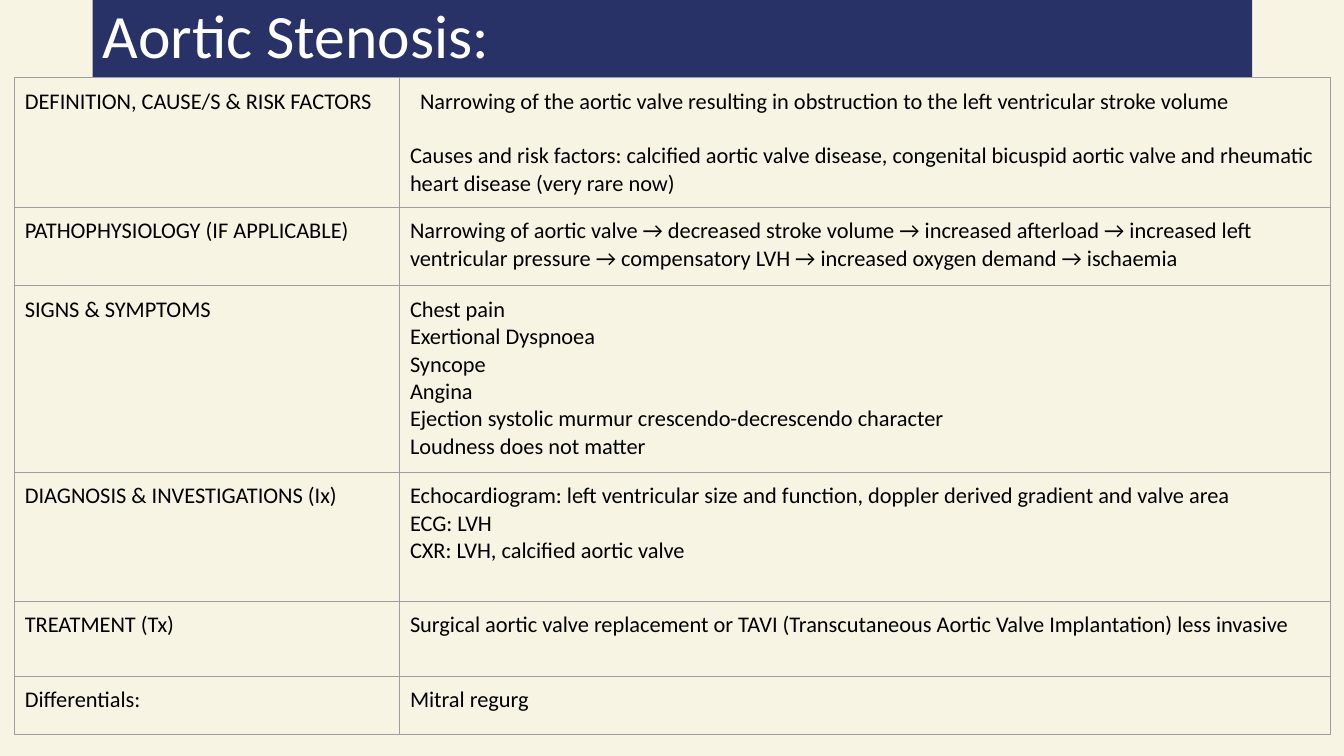
"""Build a study slide that sums up aortic stenosis in a two-column table."""
from lxml import etree
from pptx import Presentation
from pptx import util as u
from pptx.dml.color import RGBColor
from pptx.enum import text
from pptx.oxml import ns

CREAM = RGBColor(0xF8, 0xF4, 0xE4)
NAVY = RGBColor(0x29, 0x32, 0x67)
WHITE = RGBColor(0xFF, 0xFF, 0xFF)
BLACK = RGBColor(0, 0, 0)
GREY = RGBColor(0x9E, 0x9E, 0x9E)

COLS = [28.66, 69.24]
ROWS = [
    (16.4, "DEFINITION, CAUSE/S & RISK FACTORS", [
        "Narrowing of the aortic valve resulting in obstruction to the left ventricular stroke volume",
        "Causes and risk factors: calcified aortic valve disease, congenital bicuspid aortic valve "
        "and rheumatic heart disease (very rare now)"]),
    (10.4, "PATHOPHYSIOLOGY (IF APPLICABLE)", [
        "Narrowing of aortic valve → decreased stroke volume → increased afterload → increased left "
        "ventricular pressure → compensatory LVH → increased oxygen demand → ischaemia"]),
    (24.67, "SIGNS & SYMPTOMS", [
        "Chest pain", "Exertional Dyspnoea", "Syncope", "Angina",
        "Ejection systolic murmur crescendo-decrescendo character",
        "Loudness does not matter"]),
    (17.07, "DIAGNOSIS & INVESTIGATIONS (Ix)", [
        "Echocardiogram: left ventricular size and function, doppler derived gradient and valve area",
        "ECG: LVH", "CXR: LVH, calcified aortic valve"]),
    (9.87, "TREATMENT (Tx)", [
        "Surgical aortic valve replacement or TAVI (Transcutaneous Aortic Valve Implantation) "
        "less invasive"]),
    (7.73, "Differentials:", ["Mitral regurg"]),
]


class Deck:
    """Hold the style and the slide; lengths are percentages of the slide's size."""

    def __init__(self, font):
        self.font = font
        self.prs = Presentation()
        self.prs.slide_width = u.Inches(13.33)
        self.prs.slide_height = u.Inches(7.5)
        self.slide = self.prs.slides.add_slide(self.prs.slide_layouts[5])
        fill = self.slide.background.fill
        fill.solid()
        fill.fore_color.rgb = CREAM

    def wide(self, share):
        """Turn a share of the width into a length."""
        return u.Emu(round(self.prs.slide_width * share / 100))

    def high(self, share):
        """Turn a share of the height into a length."""
        return u.Emu(round(self.prs.slide_height * share / 100))

    def style(self, par, size, color):
        """Format the runs of a paragraph."""
        par.alignment = text.PP_ALIGN.LEFT
        for run in par.runs:
            run.font.name = self.font
            run.font.size = u.Pt(size)
            run.font.color.rgb = color

    def title(self, words, x, y, w, h):
        """Place the title on its coloured bar."""
        bar = self.slide.shapes.title
        bar.left, bar.top = self.wide(x), self.high(y)
        bar.width, bar.height = self.wide(w), self.high(h)
        bar.fill.solid()
        bar.fill.fore_color.rgb = NAVY
        frame = bar.text_frame
        frame.text = words
        frame.auto_size = text.MSO_AUTO_SIZE.NONE
        frame.vertical_anchor = text.MSO_ANCHOR.MIDDLE
        frame.paragraphs[0].line_spacing = 0.9
        self.style(frame.paragraphs[0], 44, WHITE)

    def border(self, cell):
        """Draw a thin line on all four sides of a cell."""
        props = cell._tc.get_or_add_tcPr()
        for spot, side in enumerate(("lnL", "lnR", "lnT", "lnB")):
            line = etree.Element(ns.qn("a:" + side), w=str(u.Pt(0.75)))
            fill = etree.SubElement(line, ns.qn("a:solidFill"))
            etree.SubElement(fill, ns.qn("a:srgbClr"), val=str(GREY))
            props.insert(spot, line)

    def cell(self, cell, lines):
        """Fill one cell with paragraphs."""
        cell.fill.background()
        self.border(cell)
        cell.margin_left = cell.margin_right = u.Inches(0.1)
        cell.margin_top = cell.margin_bottom = u.Inches(0.1)
        cell.text_frame.text = "\n".join(lines)
        for par in cell.text_frame.paragraphs:
            self.style(par, 16, BLACK)

    def table(self, x, y, cols, rows):
        """Add the table and return it."""
        frame = self.slide.shapes.add_table(
            len(rows), len(cols), self.wide(x), self.high(y),
            self.wide(sum(cols)), self.high(sum(row[0] for row in rows)))
        grid = frame.table
        grid.first_row = grid.horz_banding = False
        for col, share in zip(grid.columns, cols):
            col.width = self.wide(share)
        for i, (share, head, lines) in enumerate(rows):
            grid.rows[i].height = self.high(share)
            self.cell(grid.cell(i, 0), [head])
            self.cell(grid.cell(i, 1), lines)
        return grid


def main():
    """Build and save the slide."""
    deck = Deck("Calibri")
    deck.title("Aortic Stenosis:", 6.9, 0, 86.27, 10.27)
    grid = deck.table(1.1, 10.27, COLS, ROWS)
    lead = grid.cell(0, 1).text_frame.paragraphs[0]
    lead.space_after = u.Pt(19.5)
    lead._p.get_or_add_pPr().set("indent", str(u.Inches(0.1)))
    deck.prs.save("out.pptx")


if __name__ == "__main__":
    main()
